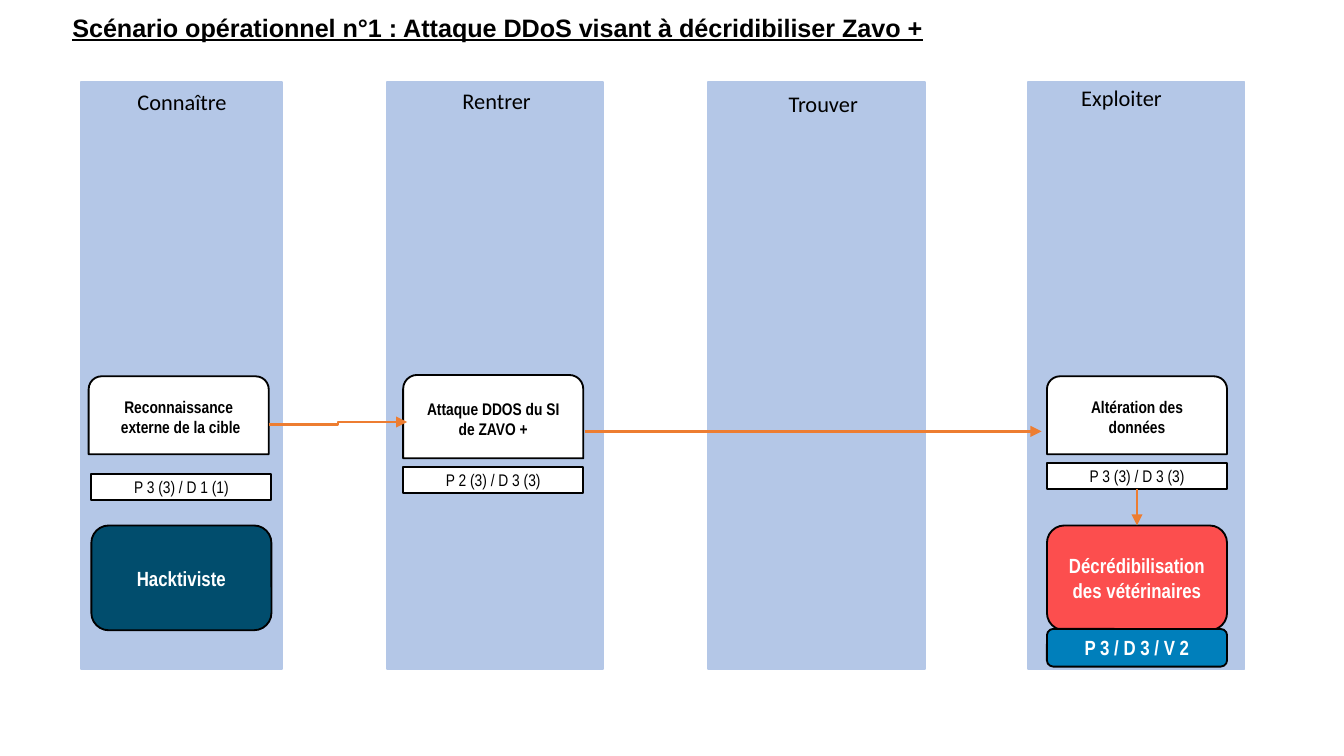
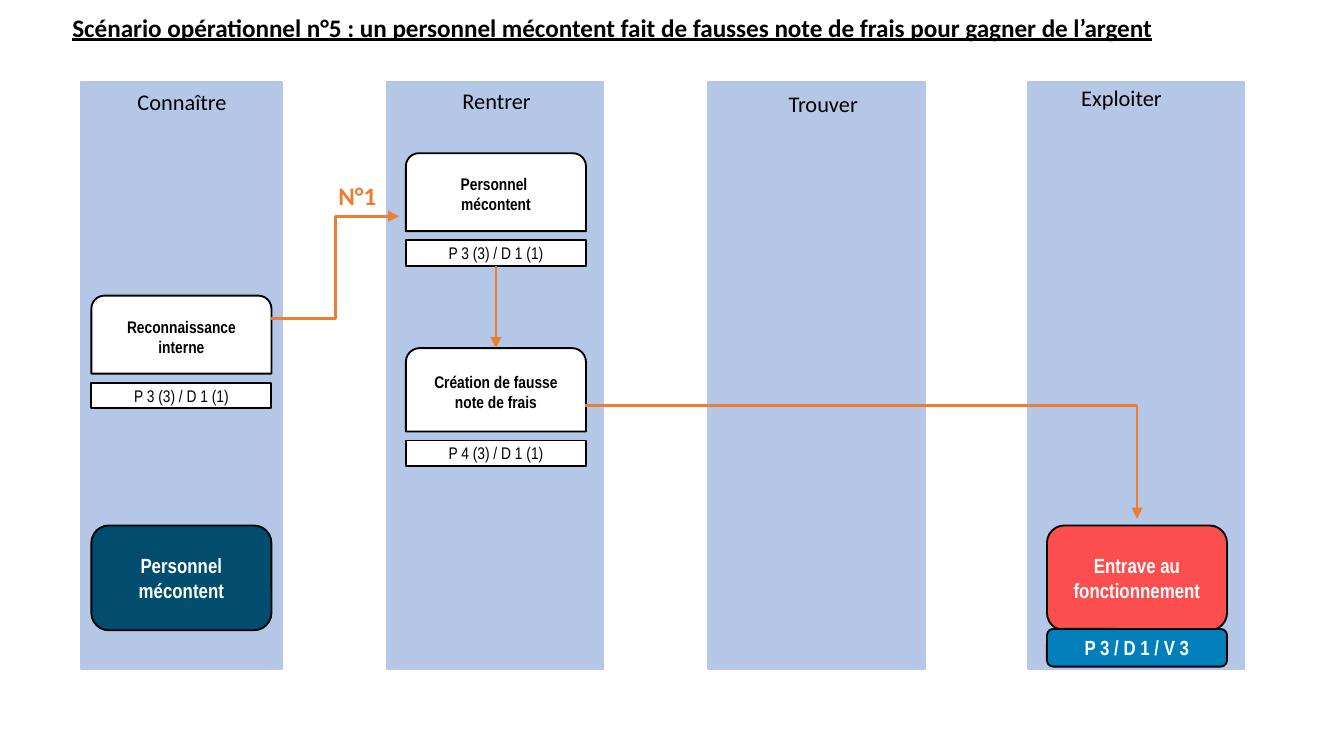
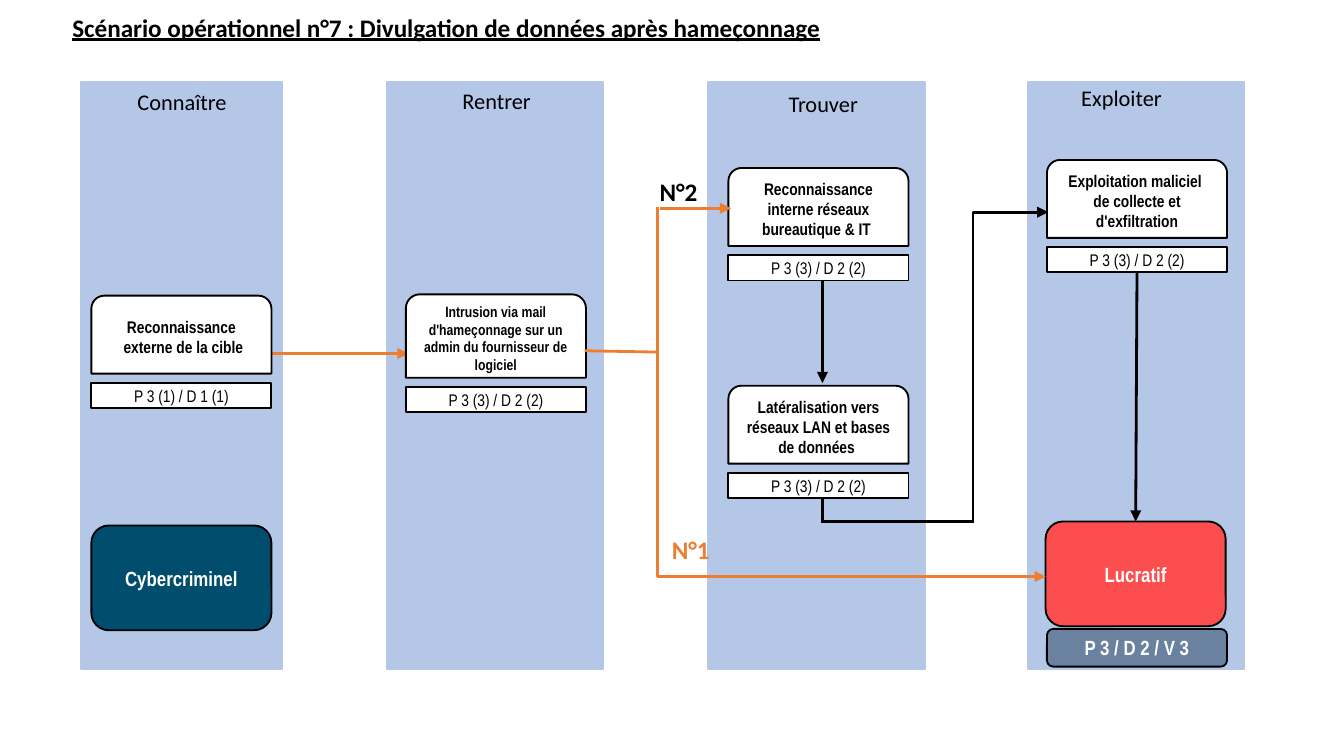
from lxml import etree
from pptx import Presentation, util as u
from pptx.dml.color import RGBColor
from pptx.enum import shapes, text
from pptx.oxml.ns import qn

COLOURS = {
    "lane": "B4C7E7",
    "black": "000000",
    "white": "FFFFFF",
    "orange": "ED7D31",
    "source": "014D6D",
    "outcome": "FC4E4E",
    "rating": "007FBB",
    "muted": "6A829F",
}
WIDTH, HEIGHT = u.Inches(10), u.Inches(5.625)
GRID_COLUMNS, GRID_ROWS = 100, 56.25
CARD_WIDTH, CARD_HEIGHT, SCORE_HEIGHT = 13.4, 5.8, 1.9
FIND, EXPLOIT = 54.2, 77.9
LANES = [
    ("Connaître", 6, 15, 6.3, 6.1),
    ("Rentrer", 28.8, 16.1, 29.7, 6),
    ("Trouver", 52.7, 16.1, 54, 6.2),
    ("Exploiter", 76.5, 16.1, 76.2, 5.8),
]


def colour(name):
    return RGBColor.from_string(COLOURS[name])


def x(columns):
    return round(WIDTH * columns / GRID_COLUMNS)


def y(rows):
    return round(HEIGHT * rows / GRID_ROWS)


def place(left, top, width, height):
    return x(left), y(top), x(width), y(height)


def write(shape, words, size, font="Arial Narrow", ink="black", bold=False,
          underline=None, align=text.PP_ALIGN.CENTER):
    frame = shape.text_frame
    frame.word_wrap = True
    frame.text = words
    for paragraph in frame.paragraphs:
        paragraph.alignment = align
        for run in paragraph.runs:
            run.font.name = font
            run.font.size = u.Pt(size)
            run.font.bold = bold
            run.font.underline = underline
            run.font.color.rgb = colour(ink)


def add_box(slide, kind, area, fill, line="black"):
    shape = slide.shapes.add_shape(kind, *place(*area))
    shape.shadow.inherit = False
    shape.fill.solid()
    shape.fill.fore_color.rgb = colour(fill)
    shape.line.color.rgb = colour(line)
    shape.line.width = u.Pt(1)
    shape.text_frame.vertical_anchor = text.MSO_ANCHOR.MIDDLE
    return shape


def add_label(slide, area, words, size, **style):
    label = slide.shapes.add_textbox(*place(*area))
    write(label, words, size, font=style.pop("font", "Calibri"), **style)
    label.text_frame.auto_size = text.MSO_AUTO_SIZE.SHAPE_TO_FIT_TEXT


def add_path_label(slide, left, top, words, ink):
    add_label(slide, (left, top, 5.5, 3.3), words, 13.5, ink=ink, bold=True,
              align=text.PP_ALIGN.LEFT)


def add_step(slide, left, top, words, score, height=CARD_HEIGHT, size=9, gap=0.67, shift=0):
    card = add_box(slide, shapes.MSO_SHAPE.ROUND_2_SAME_RECTANGLE,
                   (left, top, CARD_WIDTH, height), "white")
    write(card, words, size, bold=True)
    score_box = add_box(slide, shapes.MSO_SHAPE.RECTANGLE,
                        (left + shift, top + height + gap, CARD_WIDTH, SCORE_HEIGHT), "white")
    write(score_box, score, 9)
    return score_box


def add_badge(slide, left, top, height, words, fill):
    badge = add_box(slide, shapes.MSO_SHAPE.ROUNDED_RECTANGLE,
                    (left, top, CARD_WIDTH, height), fill)
    write(badge, words, 11, ink="white", bold=True)
    return badge


def add_link(slide, begin, end, ink="orange", arrow=True, bend=None):
    kind = shapes.MSO_CONNECTOR.STRAIGHT if bend is None else shapes.MSO_CONNECTOR.ELBOW
    link = slide.shapes.add_connector(kind, x(begin[0]), y(begin[1]), x(end[0]), y(end[1]))
    link.line.color.rgb = colour(ink)
    link.line.width = u.Pt(1.5)
    properties = link._element.spPr
    if arrow:
        etree.SubElement(link.line._get_or_add_ln(), qn("a:tailEnd"), type="triangle")
    etree.SubElement(properties, qn("a:effectLst"))
    if bend is not None:
        geometry = properties.find(qn("a:prstGeom"))
        guides = geometry.find(qn("a:avLst"))
        if guides is None:
            guides = etree.SubElement(geometry, qn("a:avLst"))
        etree.SubElement(guides, qn("a:gd"), name="adj1", fmla=f"val {round(bend * 100000)}")
    return link


def add_scenario(presentation, title, source, outcome, rating, title_font="Calibri",
                 title_height=3.3, outcome_at=(EXPLOIT, 39.1), rating_fill="rating"):
    slide = presentation.slides.add_slide(presentation.slide_layouts[6])
    for name, left, width, label_left, label_top in LANES:
        add_box(slide, shapes.MSO_SHAPE.RECTANGLE, (left, 6.1, width, 43.7), "lane", "lane")
        add_label(slide, (label_left, label_top, 14.5, 3), name, 12)
    add_label(slide, (4.4, 0.4, 88.2, title_height), title, 13.5, font=title_font,
              bold=True, underline=True, align=text.PP_ALIGN.LEFT)
    add_badge(slide, 6.8, 39.1, 7.8, source, "source")
    outcome_badge = add_badge(slide, *outcome_at, 7.8, outcome, "outcome")
    add_badge(slide, EXPLOIT, 46.8, 2.8, rating, rating_fill)
    return slide, outcome_badge


def add_denial_of_service(presentation):
    slide, outcome = add_scenario(
        presentation, "Scénario opérationnel n°1 : Attaque DDoS visant à décridibiliser Zavo +",
        "Hacktiviste", "Décrédibilisation des vétérinaires", "P 3 / D 3 / V 2",
        title_font="Arial")
    add_step(slide, 6.6, 28, "Reconnaissance\n externe de la cible", "P 3 (3) / D 1 (1)",
             gap=1.5, shift=0.2)
    add_step(slide, 30, 27.9, "Attaque DDOS du SI de ZAVO +", "P 2 (3) / D 3 (3)", height=6.2)
    score = add_step(slide, EXPLOIT, 28, "Altération des données", "P 3 (3) / D 3 (3)")
    add_link(slide, (20, 31.6), (30.3, 31.4), bend=0.5)
    add_link(slide, (43.5, 32.1), (77.5, 32.1))
    fall = add_link(slide, (84.6, 36.5), (84.6, 39.1))
    fall.begin_connect(score, 2)
    fall.end_connect(outcome, 0)


def add_false_expenses(presentation):
    slide, _ = add_scenario(
        presentation,
        "Scénario opérationnel n°5 : un personnel mécontent fait de fausses note de frais "
        "pour gagner de l’argent",
        "Personnel mécontent", "Entrave au fonctionnement", "P 3 / D 1 / V 3", title_height=5.6)
    add_step(slide, 6.8, 22, "Reconnaissance interne", "P 3 (3) / D 1 (1)")
    score = add_step(slide, 30.2, 11.4, "Personnel \nmécontent", "P 3 (3) / D 1 (1)")
    add_step(slide, 30.2, 25.9, "Création de fausse note de frais", "P 4 (3) / D 1 (1)",
             height=6.2)
    add_path_label(slide, 24.2, 12.9, "N°1", "orange")
    add_link(slide, (20.2, 23.7), (29.7, 16.1), bend=0.5)
    add_link(slide, (36.9, 19.7), (36.9, 25.9)).begin_connect(score, 2)
    add_link(slide, (43.5, 30.2), (84.6, 38.6), bend=1)


def add_phishing(presentation):
    slide, outcome = add_scenario(
        presentation, "Scénario opérationnel n°7 : Divulgation de données après hameçonnage",
        "Cybercriminel", "Lucratif", "P 3 / D 2 / V 3",
        outcome_at=(77.8, 38.8), rating_fill="muted")
    add_link(slide, (19.7, 26.3), (30.4, 26.3))
    add_link(slide, (61.2, 20.9), (61.2, 28.5), "black")
    add_step(slide, 6.8, 22, "Reconnaissance\n externe de la cible", "P 3 (1) / D 1 (1)")
    add_step(slide, 30.2, 21.9,
             "Intrusion via mail d'hameçonnage sur un admin du fournisseur de logiciel",
             "P 3 (3) / D 2 (2)", height=6.2, size=8)
    add_step(slide, FIND, 12.5, "Reconnaissance\n interne réseaux \nbureautique & IT ",
             "P 3 (3) / D 2 (2)")
    add_step(slide, FIND, 28.7, "Latéralisation vers réseaux LAN et bases de données ",
             "P 3 (3) / D 2 (2)")
    score = add_step(slide, EXPLOIT, 11.9,
                     "Exploitation maliciel \nde collecte et d'exfiltration",
                     "P 3 (3) / D 2 (2)")
    add_path_label(slide, 49, 39.3, "N°1", "orange")
    add_path_label(slide, 48.1, 12.6, "N°2", "black")
    add_link(slide, (43.5, 26.1), (48.9, 26.2), arrow=False)
    add_link(slide, (48.9, 15.4), (48.9, 36.2), arrow=False)
    add_link(slide, (49.1, 15.5), (54.4, 15.5))
    add_link(slide, (48.9, 36), (77.8, 42.9), bend=0)
    add_link(slide, (61.2, 37), (61.2, 38.9), "black", arrow=False)
    add_link(slide, (61.1, 38.8), (72.5, 38.8), "black", arrow=False)
    add_link(slide, (72.4, 38.8), (78, 15.8), "black", bend=0)
    fall = add_link(slide, (84.6, 20.2), (84.5, 38.8), "black")
    fall.begin_connect(score, 2)
    fall.end_connect(outcome, 0)


def main():
    presentation = Presentation()
    presentation.slide_width, presentation.slide_height = WIDTH, HEIGHT
    add_denial_of_service(presentation)
    add_false_expenses(presentation)
    add_phishing(presentation)
    presentation.save("out.pptx")


if __name__ == "__main__":
    main()
